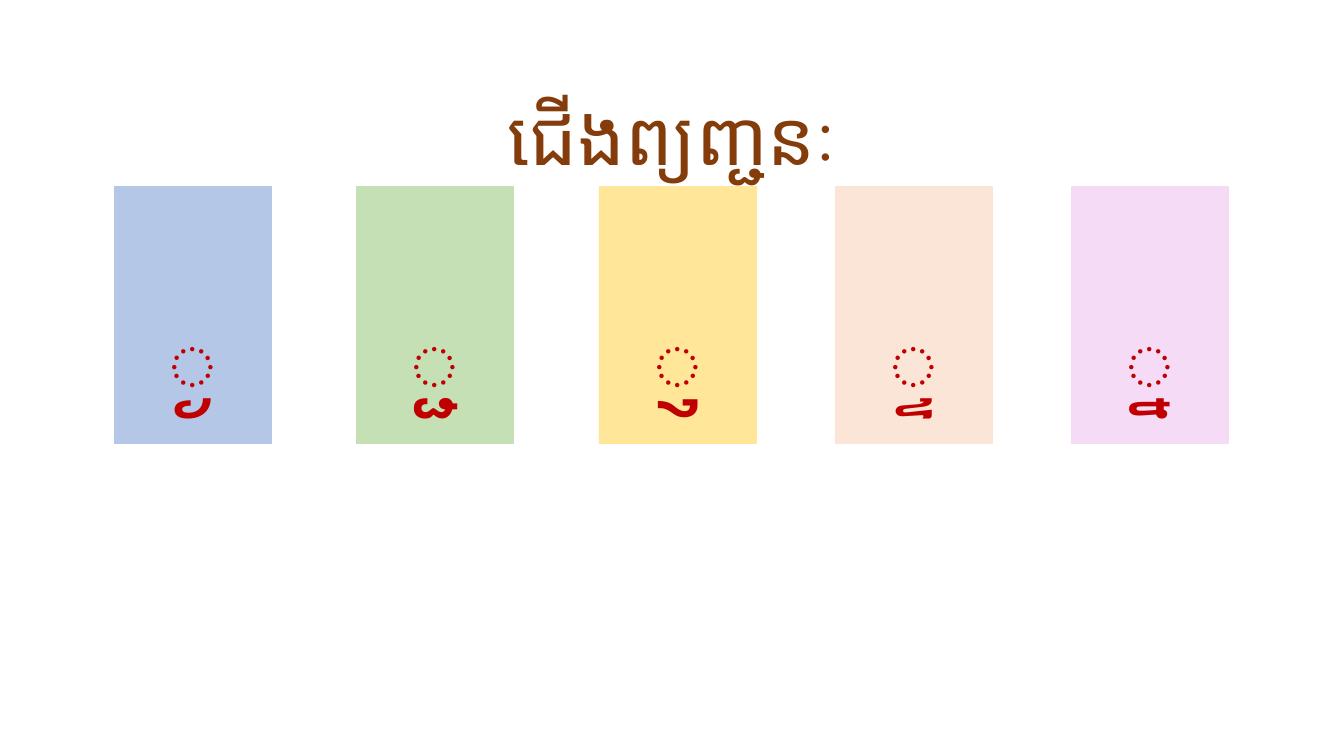
"""Build the slide of Khmer subscript consonants on five coloured cards."""
from lxml import etree
from pptx import Presentation
from pptx.dml.color import RGBColor
from pptx.enum.shapes import MSO_SHAPE
from pptx.enum.text import MSO_ANCHOR, MSO_AUTO_SIZE, PP_ALIGN
from pptx.oxml.ns import qn
from pptx.util import Pt

RECTANGLE = MSO_SHAPE.RECTANGLE
TOP, MIDDLE = MSO_ANCHOR.TOP, MSO_ANCHOR.MIDDLE
CENTER = PP_ALIGN.CENTER
NO_AUTOFIT = MSO_AUTO_SIZE.NONE

BROWN = RGBColor(0x84, 0x3C, 0x0B)
RED = RGBColor(0xC0, 0x00, 0x00)
BLUE = RGBColor(0xB4, 0xC7, 0xE7)
GREEN = RGBColor(0xC5, 0xE0, 0xB4)
YELLOW = RGBColor(0xFF, 0xE6, 0x99)
PEACH = RGBColor(0xFB, 0xE5, 0xD6)
LILAC = RGBColor(0xF6, 0xDB, 0xF7)


def px(length):
    return round(length * 914400 / 100.8)


def write(frame, text, *, size, font, color, spacing, anchor):
    frame.word_wrap = True
    frame.auto_size = NO_AUTOFIT
    frame.vertical_anchor = anchor
    paragraph = frame.paragraphs[0]
    paragraph.alignment = CENTER
    paragraph.line_spacing = spacing
    paragraph.space_before = Pt(0)
    run = paragraph.add_run()
    run.text = text
    run.font.size = Pt(size)
    run.font.color.rgb = color
    run.font.name = font
    etree.SubElement(run.font._element, qn("a:cs"), typeface=font)


deck = Presentation()
deck.slide_width, deck.slide_height = px(1344), px(756)
slide = deck.slides.add_slide(deck.slide_layouts[5])

heading = slide.shapes.title
heading.left, heading.top = px(93), px(40)
heading.width, heading.height = px(1159), px(146)
write(heading.text_frame, "ជើងព្យញ្ជនៈ", size=54, font="Lato", color=BROWN,
      spacing=1.5, anchor=MIDDLE)

subscripts = [
    (114, "្ង", BLUE),
    (356, "្ជ", GREEN),
    (599, "្ញ", YELLOW),
    (835, "្ទ", PEACH),
    (1071, "្ន", LILAC),
]
for left, subscript, tint in subscripts:
    card = slide.shapes.add_shape(RECTANGLE, px(left), px(186), px(158), px(258))
    card.shadow.inherit = False
    card.fill.solid()
    card.fill.fore_color.rgb = tint
    card.line.fill.background()
    write(card.text_frame, subscript, size=66, font="Arial", color=RED,
          spacing=2.0, anchor=TOP)

deck.save("out.pptx")
